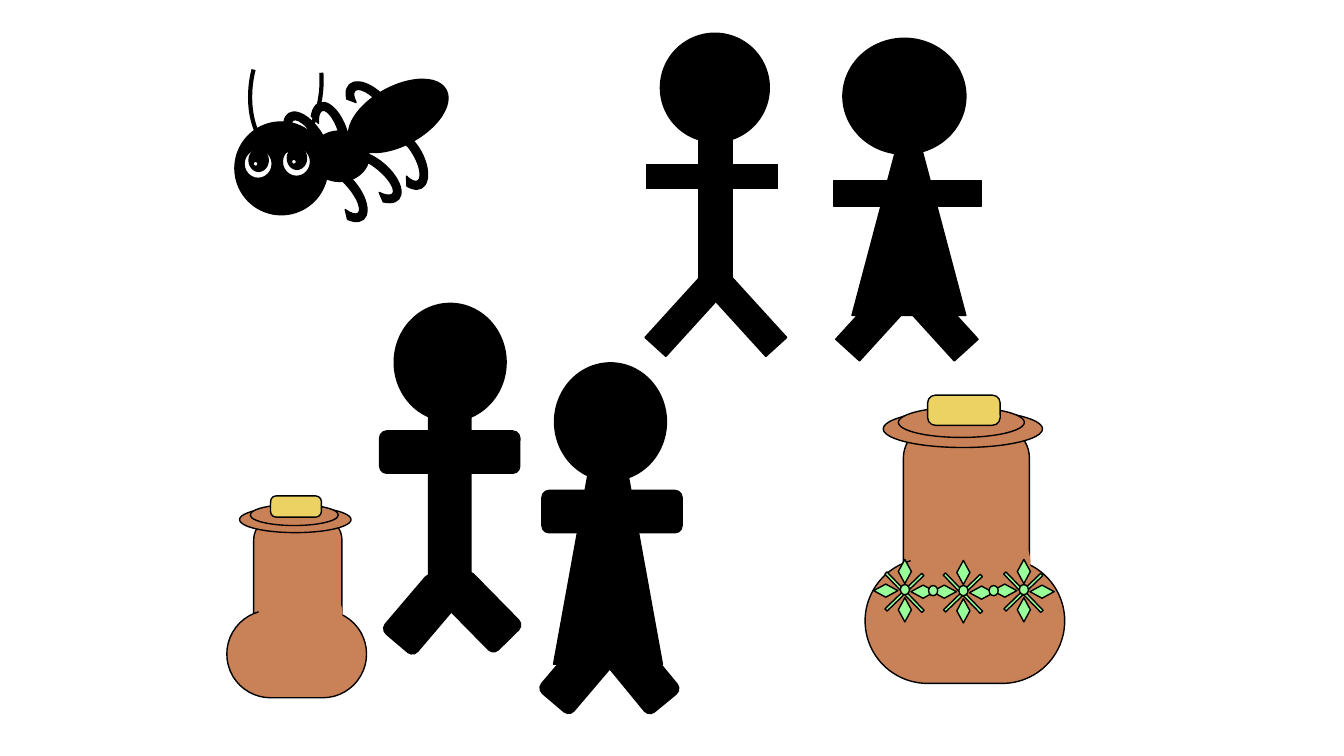
"""Draw an ant, two pairs of figures and two clay pots on one slide."""
from dataclasses import dataclass, replace
from typing import Optional

from pptx import Presentation
from pptx.dml.color import RGBColor
from pptx.enum import shapes
from pptx.util import Pt

PX = 9144
BLACK = RGBColor(0, 0, 0)
WHITE = RGBColor(255, 255, 255)
CLAY = RGBColor(0xC9, 0x82, 0x57)
GOLD = RGBColor(0xEC, 0xD2, 0x62)
MINT = RGBColor(0x99, 0xFF, 0x99)

KIND = shapes.MSO_SHAPE
OVAL, RECT, ROUND = KIND.OVAL, KIND.RECTANGLE, KIND.ROUNDED_RECTANGLE
HOOK = (0.224, 11.423, 199.636, 92.016, 0.125)


@dataclass(frozen=True)
class Part:
    kind: shapes.MSO_SHAPE
    left: int
    top: int
    width: int
    height: int
    turn: float = 0
    fill: Optional[RGBColor] = BLACK
    line: int = 1
    adj: tuple[float, ...] = ()
    flip: bool = False


def draw(group, part: Part, x: int = 0, y: int = 0, scale: float = 1) -> None:
    left, top = x + part.left * scale, y + part.top * scale
    box = (left, top, part.width * scale, part.height * scale)
    shape = group.shapes.add_shape(part.kind, *(round(n * PX) for n in box))
    shape.shadow.inherit = False
    shape.rotation = part.turn
    for i, value in enumerate(part.adj):
        shape.adjustments[i] = value
    if part.flip:
        shape._element.spPr.xfrm.set("flipH", "1")
    if part.fill is None:
        shape.fill.background()
    else:
        shape.fill.solid()
        shape.fill.fore_color.rgb = part.fill
    if part.line:
        shape.line.color.rgb = BLACK
        shape.line.width = Pt(part.line)
    else:
        shape.line.fill.background()


def place(group, parts: list[Part], x: int = 0, y: int = 0, scale: float = 1) -> None:
    for part in parts:
        draw(group, part, x, y, scale)


def leg(left: int, top: int, width: int, turn: float, flip: bool = False) -> Part:
    return Part(KIND.CIRCULAR_ARROW, left, top, width, 35, turn, adj=HOOK, flip=flip)


ANT = [
    Part(OVAL, 308, 130, 58, 50),
    Part(OVAL, 233, 121, 92, 92),
    Part(OVAL, 341, 86, 108, 58, 331.3),
    leg(270, 124, 69, 58.2),
    leg(293, 117, 69, 72.5),
    leg(336, 90, 65, 47.1),
    leg(304, 174, 69, 49.8, True),
    leg(335, 158, 69, 40.1, True),
    leg(370, 141, 65, 60.9, True),
]
EYE = [
    Part(OVAL, 0, 0, 28, 29, fill=WHITE),
    Part(OVAL, 5, 0, 19, 22),
    Part(OVAL, 9, 12, 5, 5, fill=WHITE),
]
EYES = [(242, 148), (280, 146)]
FEELER = Part(KIND.ARC, 221, 53, 125, 70, 96.4, None, 3, (143.635, 68.547))

TALL = [
    Part(OVAL, 655, 33, 108, 108),
    Part(RECT, 693, 129, 33, 167),
    Part(RECT, 694, 110, 24, 130, 90),
    Part(RECT, 669, 259, 28, 98, 42.3),
    Part(RECT, 723, 259, 28, 98, 317.7),
    Part(OVAL, 836, 38, 122, 115),
    Part(KIND.ISOSCELES_TRIANGLE, 845, 100, 113, 213),
    Part(RECT, 887, 119, 26, 146, 90),
    Part(RECT, 907, 256, 32, 105, 317.7),
    Part(RECT, 860, 256, 32, 105, 42.3),
]
STOUT = [
    Part(OVAL, 391, 301, 111, 117),
    Part(ROUND, 397, 572, 42, 75, 40.4),
    Part(ROUND, 425, 401, 42, 200),
    Part(ROUND, 456, 568, 42, 78, 315.5),
    Part(ROUND, 425, 379, 42, 139, 90),
    Part(OVAL, 550, 360, 111, 117),
    Part(ROUND, 552, 631, 42, 75, 40.4),
    Part(ROUND, 615, 631, 42, 75, 320.6),
    Part(ROUND, 586, 438, 42, 139, 90),
    Part(KIND.TRAPEZOID, 549, 459, 108, 200, adj=(0.336,)),
]

POT = [
    Part(ROUND, 38, 30, 125, 213, fill=CLAY, adj=(0.26,)),
    Part(ROUND, 0, 162, 198, 124, fill=CLAY, adj=(0.5,)),
    Part(OVAL, 45, 121, 119, 91, fill=CLAY, line=0),
    Part(OVAL, 18, 15, 158, 37, fill=CLAY),
    Part(OVAL, 33, 12, 125, 30, fill=CLAY),
    Part(ROUND, 62, 0, 72, 30, fill=GOLD, adj=(0.26,)),
]
PETAL = Part(KIND.DIAMOND, 30, 2, 13, 24, fill=MINT)
BEAD = Part(OVAL, 0, 0, 9, 10, fill=MINT)
BLOOM = [
    Part(KIND.MATH_PLUS, 0, 0, 72, 69, 46, MINT, adj=(0.045,)),
    PETAL,
    replace(PETAL, top=40),
    replace(PETAL, left=48, top=22, turn=90),
    replace(PETAL, left=11, top=21, turn=90),
    replace(BEAD, left=32, top=27),
]
BLOOMS = [(861, 553), (919, 554), (979, 553)]
BEADS = [(921, 581), (981, 581)]


def main() -> None:
    deck = Presentation()
    deck.slide_width, deck.slide_height = 1333 * PX, 750 * PX
    slide = deck.slides.add_slide(deck.slide_layouts[6])
    ant, tall, small, large, stout = (slide.shapes.add_group_shape() for _ in range(5))
    place(ant, ANT)
    for x, y in EYES:
        place(ant, EYE, x, y)
    draw(ant, FEELER)
    place(tall, TALL)
    place(small, POT, 225, 492, 0.7)
    place(large, POT, 858, 392)
    for x, y in BLOOMS:
        place(large, BLOOM, x, y)
    for x, y in BEADS:
        draw(large, BEAD, x, y)
    place(stout, STOUT)
    deck.save("out.pptx")


if __name__ == "__main__":
    main()
